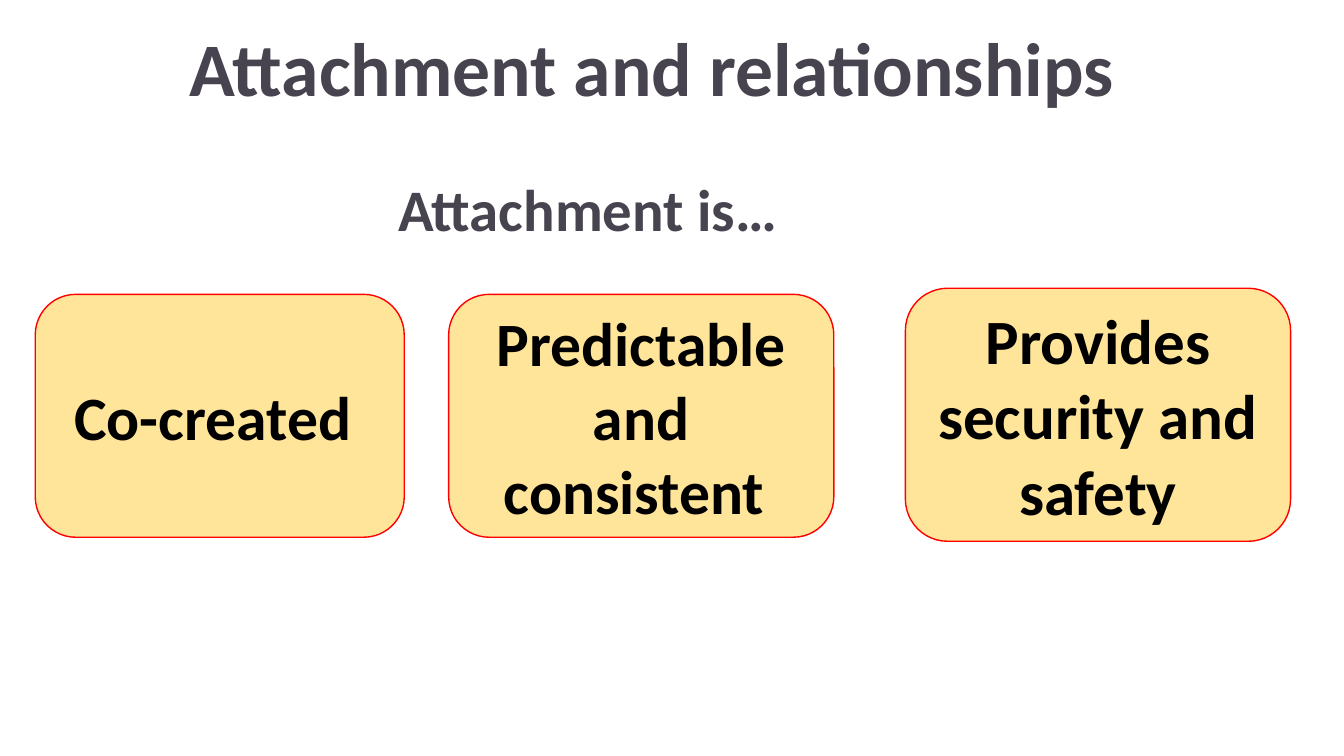
from dataclasses import dataclass

from pptx import Presentation
from pptx.dml.color import RGBColor
from pptx.enum.shapes import MSO_SHAPE
from pptx.enum.text import MSO_ANCHOR, PP_ALIGN
from pptx.util import Inches, Pt

ROUNDED = MSO_SHAPE.ROUNDED_RECTANGLE
MIDDLE = MSO_ANCHOR.MIDDLE
LEFT, CENTER = PP_ALIGN.LEFT, PP_ALIGN.CENTER


@dataclass(frozen=True)
class Theme:
    font: str = "Calibri"
    heading: RGBColor = RGBColor(0x47, 0x43, 0x4F)
    quality: RGBColor = RGBColor(0, 0, 0)
    card_fill: RGBColor = RGBColor(0xFF, 0xE5, 0x99)
    card_line: RGBColor = RGBColor(0xFF, 0, 0)
    title_size: int = 54
    lead_size: int = 42
    card_size: int = 44
    wide_card_size: int = 45


THEME = Theme()


def write(frame, text, size, color, align):
    frame.word_wrap = True
    frame.text = text
    paragraph = frame.paragraphs[0]
    paragraph.alignment = align
    font = paragraph.runs[0].font
    font.name, font.size, font.bold = THEME.font, Pt(size), True
    font.color.rgb = color
    return paragraph


def add_heading(slide, text, box, size, margin_y):
    frame = slide.shapes.add_textbox(*map(Inches, box)).text_frame
    frame.margin_top = frame.margin_bottom = Inches(margin_y)
    write(frame, text, size, THEME.heading, LEFT).line_spacing = 0.9


def add_card(slide, text, box, size):
    card = slide.shapes.add_shape(ROUNDED, *map(Inches, box))
    card.shadow.inherit = False
    card.fill.solid()
    card.fill.fore_color.rgb = THEME.card_fill
    card.line.color.rgb = THEME.card_line
    card.line.width = Pt(1)
    card.text_frame.vertical_anchor = MIDDLE
    write(card.text_frame, text, size, THEME.quality, CENTER)


def main():
    deck = Presentation()
    deck.slide_width, deck.slide_height = Inches(13.33), Inches(7.5)
    slide = deck.slides.add_slide(deck.slide_layouts[6])

    add_heading(slide, "Attachment and relationships",
                (1.78, 0.26, 10, 0.78), THEME.title_size, 0.05)
    add_heading(slide, "Attachment is…",
                (3.85, 1.69, 5.86, 0.84), THEME.lead_size, 0.1)

    qualities = (
        ("Co-created ", (0.35, 2.92, 3.66, 2.41), THEME.card_size),
        ("Predictable and consistent ", (4.45, 2.92, 3.82, 2.41), THEME.card_size),
        ("Provides security and safety", (8.98, 2.86, 3.82, 2.51), THEME.wide_card_size),
    )
    for text, box, size in qualities:
        add_card(slide, text, box, size)

    deck.save("out.pptx")


if __name__ == "__main__":
    main()
